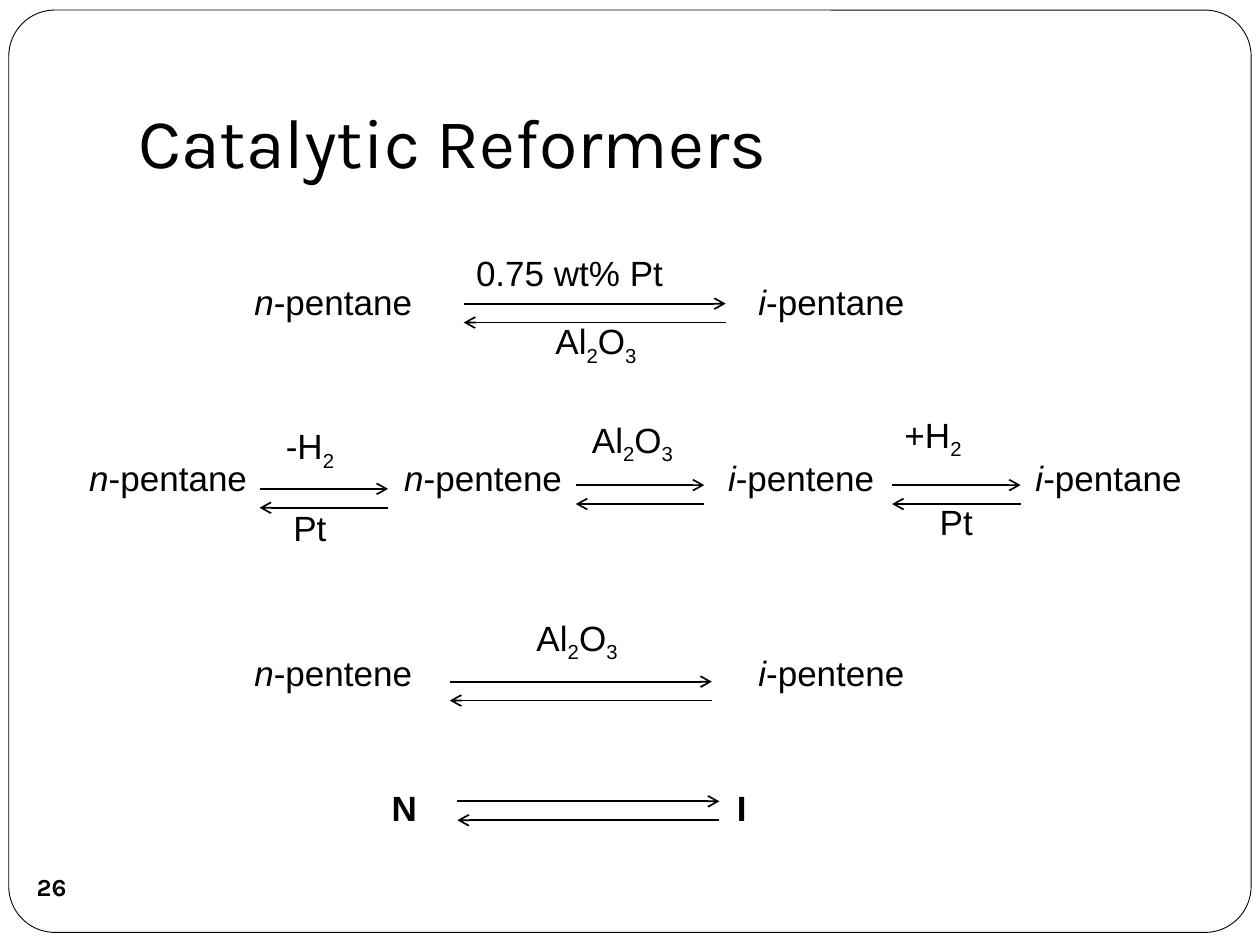
"""Build the catalytic reformers slide with its reaction equations."""
from dataclasses import dataclass
from itertools import groupby

from lxml.etree import SubElement
from pptx import Presentation
from pptx.dml.color import RGBColor
from pptx.enum.shapes import MSO_CONNECTOR as Connector, MSO_SHAPE as Shape
from pptx.enum.text import MSO_ANCHOR as Anchor, MSO_AUTO_SIZE as AutoSize, PP_ALIGN as Align
from pptx.oxml.ns import qn
from pptx.util import Inches, Pt


@dataclass(frozen=True)
class Theme:
    """Colours, fonts, type sizes and line widths."""
    ink: RGBColor = RGBColor(0, 0, 0)
    paper: RGBColor = RGBColor(255, 255, 255)
    heading_font: str = "Karla"
    body_font: str = "Arial"
    title_size: int = 40
    body_size: int = 20
    number_size: int = 14
    arrow_width: float = 1
    frame_width: float = 0.5


THEME = Theme()
ARROW_GAP = 0.15
LABEL_HEIGHT = 0.44

EQUATIONS = [
    (1.92, 2.18, 5.49, ["n-pentane", "i-pentane"], 4.0),
    (1.92, 5.12, 5.49, ["n-pentene", "i-pentene"], 4.0),
    (3.01, 6.19, 3.16, ["N", "I"], 2.74),
    (0.61, 3.57, 5.49, ["n-pentane", "n-pentene"], 2.5),
    (5.68, 3.57, 1.94, ["i-pentene"], None),
    (8.12, 3.57, 1.56, ["i-pentane"], None),
]
CONDITIONS = [
    (3.68, 2.49, 2.1, "Al2O3", Align.CENTER),
    (3.53, 4.84, 2.1, "Al2O3", Align.CENTER),
    (2.17, 3.32, 0.73, "-H2", Align.LEFT),
    (2.23, 3.97, 0.61, "Pt", Align.LEFT),
    (4.6, 3.27, 1.2, "Al2O3", Align.LEFT),
    (7.08, 3.23, 1.01, "+H2", Align.LEFT),
    (7.36, 3.92, 0.89, "Pt", Align.LEFT),
]
EQUILIBRIA = [
    (3.68, 2.41, 2.08), (3.57, 5.41, 2.08), (3.63, 6.36, 2.08),
    (2.06, 3.88, 1.02), (4.57, 3.85, 1.02), (7.08, 3.85, 1.02),
]


def set_format(target, values):
    """Set each named attribute on the target."""
    for name, value in values.items():
        setattr(target, name, value)


def add_run(paragraph, text, size=THEME.body_size, font=THEME.body_font, **values):
    """Append a formatted run to the paragraph."""
    run = paragraph.add_run()
    run.text = text
    run.font.color.rgb = THEME.ink
    set_format(run.font, {"size": Pt(size), "name": font, **values})
    return run


def add_label(slide, left, top, width, align=Align.LEFT):
    """Add an empty text box and return its first paragraph."""
    box = slide.shapes.add_textbox(*map(Inches, (left, top, width, LABEL_HEIGHT)))
    set_format(box.text_frame, {"word_wrap": True, "auto_size": AutoSize.SHAPE_TO_FIT_TEXT})
    paragraph = box.text_frame.paragraphs[0]
    paragraph.alignment = align
    return paragraph


def add_equation(slide, left, top, width, species, tab):
    """Add the species of one equation, set apart by a tab stop."""
    paragraph = add_label(slide, left, top, width)
    if tab:
        properties = paragraph._p.get_or_add_pPr()
        stops = SubElement(properties, qn("a:tabLst"))
        SubElement(stops, qn("a:tab"), pos=str(Inches(tab)), algn="l")
    for index, name in enumerate(species):
        if index:
            add_run(paragraph, "\t")
        prefix, hyphen, stem = name.partition("-")
        if hyphen:
            add_run(paragraph, prefix, italic=True)
            add_run(paragraph, hyphen + stem)
        else:
            add_run(paragraph, name, bold=True)


def add_formula(slide, left, top, width, formula, align):
    """Add a chemical formula with its digits as subscripts."""
    paragraph = add_label(slide, left, top, width, align)
    for is_digit, characters in groupby(formula, str.isdigit):
        run = add_run(paragraph, "".join(characters))
        if is_digit:
            run._r.get_or_add_rPr().set("baseline", "-25000")


def add_arrow(slide, start, end, height):
    """Add a level arrow from start to end."""
    arrow = slide.shapes.add_connector(
        Connector.STRAIGHT, *map(Inches, (start, height, end, height)))
    arrow.line.color.rgb = THEME.ink
    arrow.line.width = Pt(THEME.arrow_width)
    SubElement(arrow.line._get_or_add_ln(), qn("a:tailEnd"), type="arrow")
    SubElement(arrow._element.spPr, qn("a:effectLst"))


def add_equilibrium(slide, left, top, length):
    """Add a forward arrow above a backward arrow."""
    add_arrow(slide, left, left + length, top)
    add_arrow(slide, left + length, left, top + ARROW_GAP)


def add_title(slide, text):
    """Place and fill the title placeholder."""
    title = slide.shapes.title
    set_format(title, {"left": Inches(1), "top": Inches(0.3),
                       "width": Inches(8.5), "height": Inches(1.25)})
    set_format(title.text_frame, {
        "vertical_anchor": Anchor.BOTTOM, "word_wrap": True,
        "margin_left": Inches(0.1), "margin_right": Inches(0.1),
        "margin_top": Inches(0.05), "margin_bottom": Inches(0.1)})
    paragraph = title.text_frame.paragraphs[0]
    paragraph.alignment = Align.LEFT
    add_run(paragraph, text, THEME.title_size, THEME.heading_font)


def add_frame(slide):
    """Add the rounded slide border behind the title."""
    frame = slide.shapes.add_shape(
        Shape.ROUNDED_RECTANGLE, *map(Inches, (0.07, 0.08, 9.86, 7.32)))
    frame.adjustments[0] = 0.05
    frame.shadow.inherit = False
    frame.fill.solid()
    frame.fill.fore_color.rgb = THEME.paper
    frame.line.color.rgb = THEME.ink
    frame.line.width = Pt(THEME.frame_width)
    slide.shapes.title.element.addprevious(frame.element)


def add_slide_number(slide, number):
    """Add the page number in an unfilled circle."""
    circle = slide.shapes.add_shape(Shape.OVAL, *map(Inches, (0.16, 6.79, 0.5, 0.5)))
    circle.shadow.inherit = False
    circle.fill.background()
    circle.line.fill.background()
    margins = dict.fromkeys(("margin_left", "margin_top", "margin_right", "margin_bottom"), 0)
    set_format(circle.text_frame, {
        "word_wrap": False, "vertical_anchor": Anchor.MIDDLE, **margins})
    paragraph = circle.text_frame.paragraphs[0]
    paragraph.alignment = Align.CENTER
    add_run(paragraph, number, THEME.number_size, THEME.heading_font, bold=True)


def main():
    """Build and save the presentation."""
    presentation = Presentation()
    set_format(presentation, {"slide_width": Inches(10), "slide_height": Inches(7.5)})
    slide = presentation.slides.add_slide(presentation.slide_layouts[5])
    add_frame(slide)
    add_title(slide, "Catalytic Reformers")
    for equation in EQUATIONS:
        add_equation(slide, *equation)
    add_run(add_label(slide, 3.68, 1.95, 2.1), "0.75 wt% Pt")
    for condition in CONDITIONS:
        add_formula(slide, *condition)
    for equilibrium in EQUILIBRIA:
        add_equilibrium(slide, *equilibrium)
    add_slide_number(slide, "26")
    presentation.save("out.pptx")


if __name__ == "__main__":
    main()
